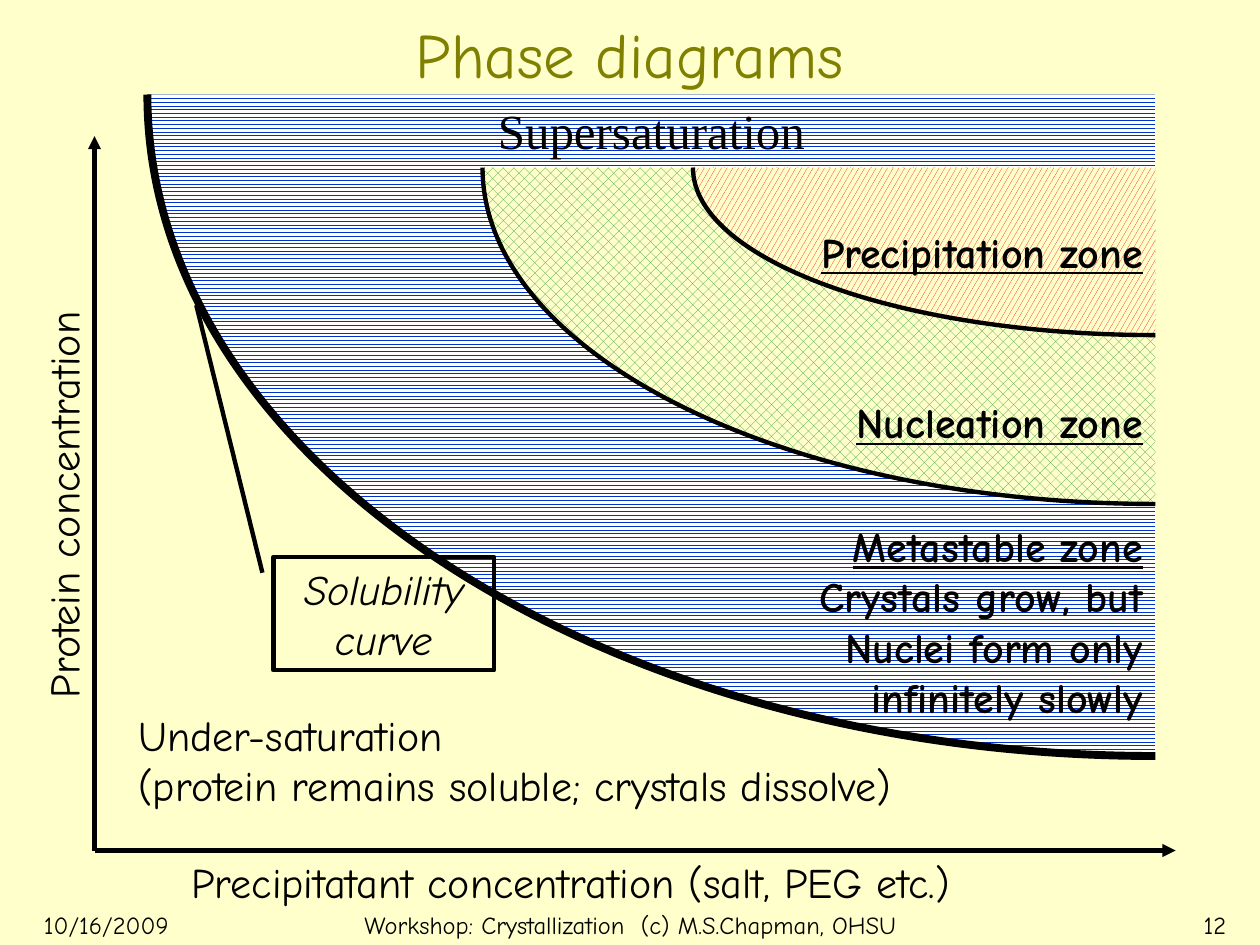
from pptx import Presentation
from pptx.dml.color import RGBColor
from pptx.enum.dml import MSO_PATTERN
from pptx.enum.shapes import MSO_CONNECTOR, MSO_SHAPE
from pptx.enum.text import MSO_ANCHOR, MSO_AUTO_SIZE, PP_ALIGN
from pptx.oxml import parse_xml
from pptx.oxml.ns import nsdecls, qn
from pptx.util import Inches, Pt
from lxml import etree

LEFT, MID, RIGHT = PP_ALIGN.LEFT, PP_ALIGN.CENTER, PP_ALIGN.RIGHT
TOP, CENTRE, BASE = MSO_ANCHOR.TOP, MSO_ANCHOR.MIDDLE, MSO_ANCHOR.BOTTOM
ZIGZAG, DOTS, FLECKS = map(MSO_PATTERN.from_xml, ("zigZag", "pct40", "lgConfetti"))
FONT, SERIF = "Comic Neue", "Times New Roman"
BLACK, CREAM, OLIVE = "000000", "FFFFCC", "808000"
EDGE = 9.17  # right edge shared by all zones

# Content: text, style
TITLE = "Phase diagrams"
FOOT = [  # text, left, width, alignment
    ("10/16/2009", 0.25, 2.08, LEFT),
    ("Workshop: Crystallization  (c) M.S.Chapman, OHSU", 2.42, 5.17, MID),
    ("12", 7.75, 2.08, RIGHT),
]
HEAD = {"bold": True, "underline": True}
ZONES = [  # left, top, height, pattern, front, back, line, label, style, align, anchor, foot inset
    (1.17, 0.75, 5.25, ZIGZAG, "0033CC", "FFFFFF", 4.5,
     "Supersaturation", {"size": 28, "name": SERIF}, MID, TOP, 0.05),
    (3.83, 1.33, 2.67, DOTS, "339933", CREAM, 2.5,
     "Nucleation zone", HEAD, RIGHT, BASE, 0.45),
    (5.5, 1.33, 1.33, FLECKS, "FF0000", CREAM, 2.5,
     "Precipitation zone", HEAD, RIGHT, CENTRE, 0.05),
]
ORIGIN = (0.75, 6.75)
AXES = [(0.75, 1.08), (9.33, 6.75)]
LABELS = [  # text, box, rotation
    ("Precipitatant concentration (salt, PEG etc.)", (1.42, 6.75, 6.89, 0.5), 0),
    ("Protein concentration", (-1.28, 3.61, 3.56, 0.5), 270),
    ("Under-saturation\n(protein remains soluble; crystals dissolve)",
     (1, 5.58, 6.81, 0.9), 0),
]
META = [("Metastable zone\n", HEAD),
        ("Crystals grow, but\nNuclei form only infinitely slowly", {"bold": True})]
CURVE = "Solubility curve"

# Quarter ellipse: an open outline, then a closed fill
ARC = ('<a:moveTo><a:pt x="1000" y="1000"/></a:moveTo><a:cubicBezTo>'
       '<a:pt x="448" y="1000"/><a:pt x="0" y="552"/><a:pt x="0" y="0"/></a:cubicBezTo>')
PATHS = (f'<a:pathLst {nsdecls("a")}><a:path w="1000" h="1000" fill="none">{ARC}</a:path>'
         f'<a:path w="1000" h="1000" stroke="0">{ARC}'
         '<a:lnTo><a:pt x="1000" y="0"/></a:lnTo><a:close/></a:path></a:pathLst>')


def rgb(code):
    return RGBColor.from_string(code)


def box(*nums):
    return [Inches(n) for n in nums]


def write(shape, runs, align=LEFT, anchor=TOP, wrap=True, color=BLACK):
    frame = shape.text_frame
    frame.word_wrap = wrap
    frame.vertical_anchor = anchor
    para = frame.paragraphs[0]
    para.alignment = align
    for text, style in runs:
        for i, line in enumerate(text.split("\n")):
            if i:
                para.add_line_break()
            if not line:
                continue
            run = para.add_run()
            run.text = line
            font = run.font
            font.size = Pt(style.get("size", 24))
            font.name = style.get("name", FONT)
            font.bold = style.get("bold", False)
            font.italic = style.get("italic", False)
            font.underline = style.get("underline", False)
            font.color.rgb = rgb(color)
    return frame


def stroke(shape, width):
    shape.line.color.rgb = rgb(BLACK)
    shape.line.width = Pt(width)


prs = Presentation()
prs.slide_width, prs.slide_height = box(10, 7.5)
slide = prs.slides.add_slide(prs.slide_layouts[5])
shapes = slide.shapes
slide.background.fill.solid()
slide.background.fill.fore_color.rgb = rgb(CREAM)

# Title and footer
title = shapes.title
title.left, title.top, title.width, title.height = box(0, 0.17, 10, 0.5)
write(title, [(TITLE, {"size": 36})], MID, CENTRE, color=OLIVE)
for text, left, width, align in FOOT:
    foot = shapes.add_textbox(*box(left, 7.17, width, 0.17))
    write(foot, [(text, {"size": 14})], align)

# Zones
for left, top, high, pat, front, back, width, text, style, align, anchor, inset in ZONES:
    pen = shapes.build_freeform(*box(EDGE, top + high))
    pen.add_line_segments([box(left, top), box(EDGE, top)])
    zone = pen.convert_to_shape()
    geom = zone.element.spPr.find(qn("a:custGeom"))
    geom.replace(geom.find(qn("a:pathLst")), parse_xml(PATHS))
    zone.shadow.inherit = False
    zone.fill.patterned()
    zone.fill.pattern = pat
    zone.fill.fore_color.rgb = rgb(front)
    zone.fill.back_color.rgb = rgb(back)
    stroke(zone, width)
    frame = write(zone, [(text, style)], align, anchor, False)
    frame.margin_bottom = Inches(inset)

# Axes
for end in AXES:
    axis = shapes.add_connector(MSO_CONNECTOR.STRAIGHT, *box(*ORIGIN, *end))
    stroke(axis, 2.5)
    props = axis.element.spPr
    etree.SubElement(props.find(qn("a:ln")), qn("a:tailEnd"), type="triangle")
    etree.SubElement(props, qn("a:effectLst"))

# Labels
for text, place, turn in LABELS:
    label = shapes.add_textbox(*box(*place))
    label.rotation = turn
    frame = write(label, [(text, {})], wrap=False)
    frame.auto_size = MSO_AUTO_SIZE.SHAPE_TO_FIT_TEXT
meta = shapes.add_textbox(*box(5.42, 4.08, 3.75, 1.7))
write(meta, META, RIGHT)

# Callout on the solubility curve
note = shapes.add_shape(MSO_SHAPE.LINE_CALLOUT_1, *box(2.17, 4.42, 1.75, 0.9))
for i, value in enumerate((0.14, -0.05, -2.22, -0.35)):
    note.adjustments[i] = value
note.shadow.inherit = False
note.fill.background()
stroke(note, 2.5)
write(note, [(CURVE, {"italic": True})], MID)

prs.save("out.pptx")
